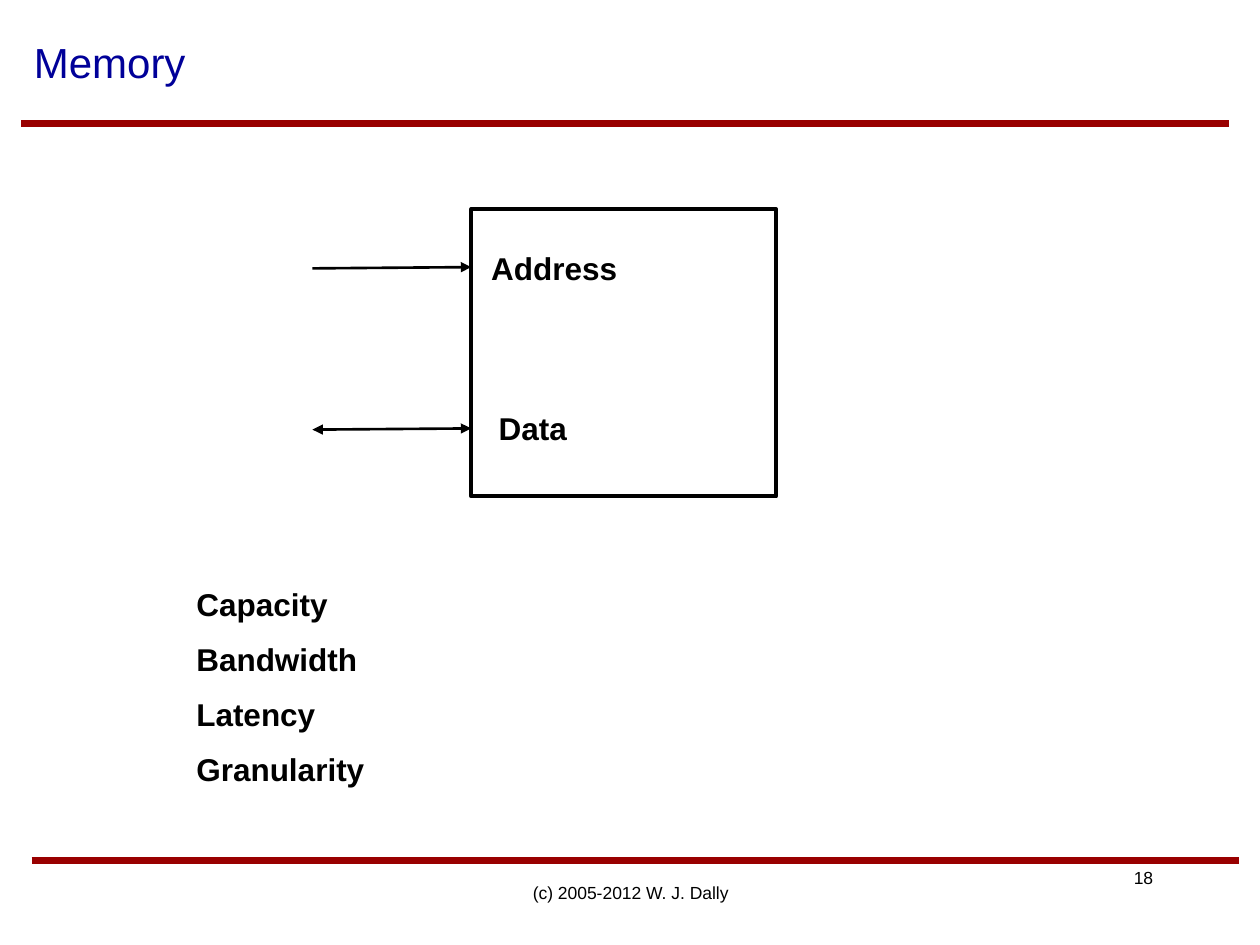
from dataclasses import dataclass, field

from lxml.etree import SubElement
from pptx import Presentation
from pptx.dml.color import RGBColor
from pptx.enum.shapes import MSO_CONNECTOR, MSO_SHAPE
from pptx.enum.text import MSO_ANCHOR, PP_ALIGN
from pptx.oxml.ns import qn
from pptx.util import Inches, Pt

BLACK, RED, BLUE = "000000", "990000", "000099"
LABEL = {"size": Pt(18), "bold": True}
SMALL = {"size": Pt(10)}
GAP = Pt(10)


@dataclass
class Note:
    lines: list[str]
    box: tuple[float, float, float, float]
    font: dict
    color: str = BLACK
    frame: dict = field(default_factory=dict)
    align: PP_ALIGN = PP_ALIGN.LEFT


@dataclass
class Line:
    start: tuple[float, float]
    end: tuple[float, float]
    color: str = BLACK
    width: float = 1.5
    tips: tuple[str, ...] = ()


def paint(target, code: str) -> None:
    target.rgb = RGBColor.from_string(code)


def style(target, values: dict) -> None:
    for name, value in values.items():
        setattr(target, name, value)


def draw_line(slide, line: Line) -> None:
    ends = [Inches(n) for n in (*line.start, *line.end)]
    shape = slide.shapes.add_connector(MSO_CONNECTOR.STRAIGHT, *ends)
    shape.line.width = Pt(line.width)
    paint(shape.line.color, line.color)
    stroke = shape.line._get_or_add_ln()
    for tip in line.tips:
        SubElement(stroke, qn(f"a:{tip}"), type="triangle")
    SubElement(shape._element.spPr, qn("a:effectLst"))


def draw_note(slide, note: Note) -> None:
    shape = slide.shapes.add_textbox(*(Inches(n) for n in note.box))
    frame = shape.text_frame
    style(frame, {"word_wrap": False, **note.frame})
    for i, text in enumerate(note.lines):
        para = frame.add_paragraph() if i else frame.paragraphs[0]
        para.alignment = note.align
        if i:
            para.space_before = GAP
        run = para.add_run()
        run.text = text
        style(run.font, {"name": "Arial", **note.font})
        paint(run.font.color, note.color)


def draw_block(slide, box: tuple[float, float, float, float]) -> None:
    shape = slide.shapes.add_shape(MSO_SHAPE.RECTANGLE, *(Inches(n) for n in box))
    shape.shadow.inherit = False
    shape.fill.background()
    shape.line.width = Pt(2.25)
    paint(shape.line.color, BLACK)


MIDDLE = {"vertical_anchor": MSO_ANCHOR.MIDDLE}
WRAP = {"word_wrap": True}

RULES = [
    Line((0.17, 0.98), (9.75, 0.98), RED, 4),
    Line((0.25, 6.83), (9.83, 6.83), RED, 4),
]
PORTS = [
    Line((2.48, 2.13), (3.74, 2.12), tips=("tailEnd",)),
    Line((2.48, 3.41), (3.74, 3.4), tips=("headEnd", "tailEnd")),
]
NOTES = [
    Note(["18"], (7.5, 6.83, 1.75, 0.27), SMALL, frame=WRAP, align=PP_ALIGN.RIGHT),
    Note(["Memory"], (0.17, 0, 9.83, 0.98), {"size": Pt(24)}, BLUE, MIDDLE | WRAP),
    Note(["(c) 2005-2012 W. J. Dally"], (3.42, 6.83, 3.17, 0.5), SMALL,
         frame=MIDDLE, align=PP_ALIGN.CENTER),
    Note(["Address"], (3.8, 1.93, 1.21, 0.4), LABEL),
    Note(["Data"], (3.86, 3.2, 0.75, 0.4), LABEL),
    Note(["Capacity", "Bandwidth", "Latency", "Granularity"],
         (1.46, 4.59, 1.58, 1.77), LABEL),
]


def main() -> None:
    deck = Presentation()
    deck.slide_width, deck.slide_height = Inches(10), Inches(7.5)
    slide = deck.slides.add_slide(deck.slide_layouts[6])

    # Rules above and below the content
    for rule in RULES:
        draw_line(slide, rule)

    # Memory block and its ports
    draw_block(slide, (3.74, 1.66, 2.42, 2.28))
    for port in PORTS:
        draw_line(slide, port)

    # Title, labels, list and footer
    for note in NOTES:
        draw_note(slide, note)

    deck.save("out.pptx")


if __name__ == "__main__":
    main()
